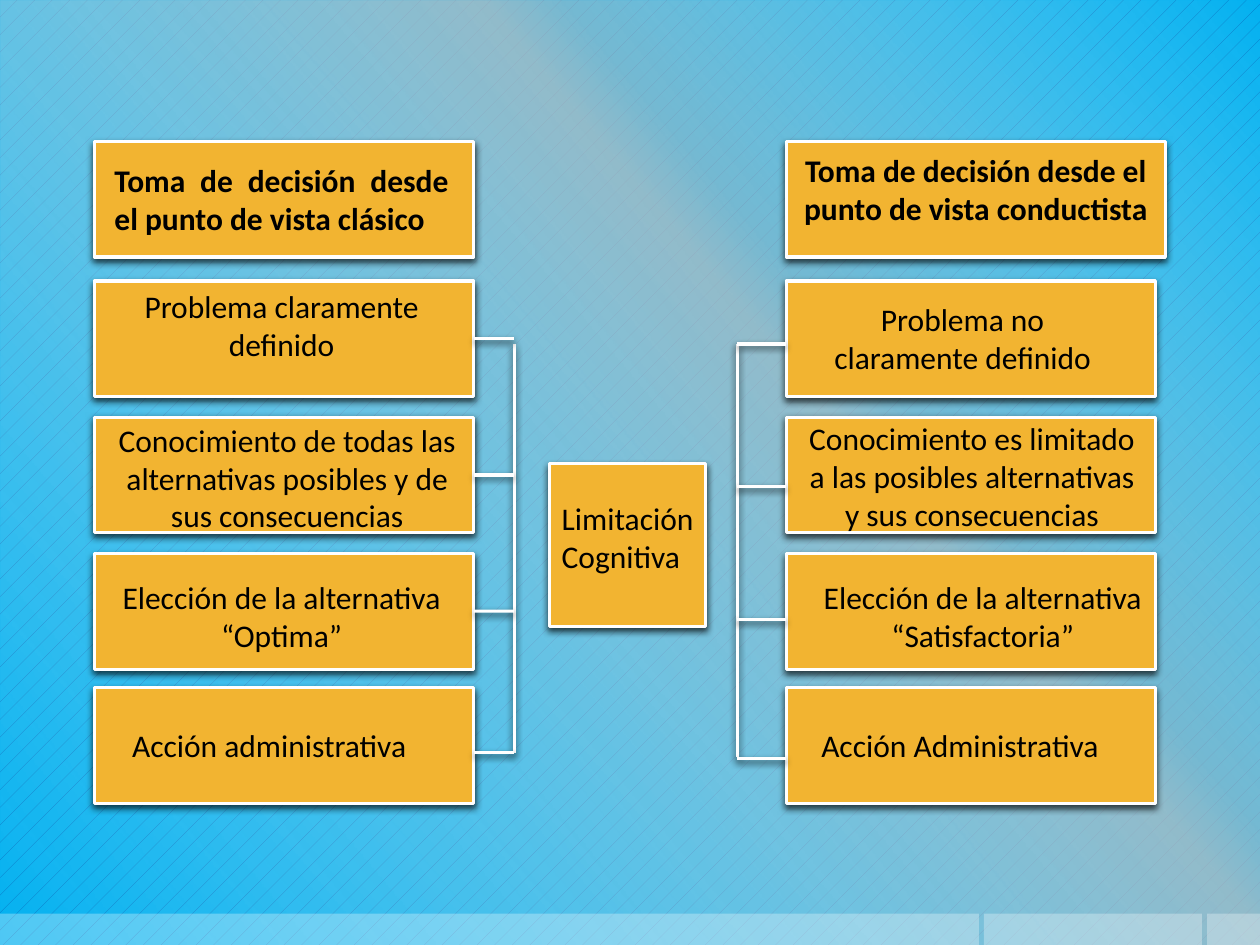
from lxml import etree
from pptx import Presentation
from pptx.dml.color import RGBColor
from pptx.enum import dml, shapes, text
from pptx.oxml import parse_xml
from pptx.oxml.ns import nsdecls, qn
from pptx.util import Inches, Pt

DEEP_BLUE = RGBColor(0x00, 0x70, 0xC0)
SKY_BLUE = RGBColor(0x00, 0xB0, 0xF0)
AMBER = RGBColor(0xF2, 0xB4, 0x31)
WHITE = RGBColor(0xFF, 0xFF, 0xFF)
BLACK = RGBColor(0x00, 0x00, 0x00)

LEFT, CENTER, JUSTIFY = (text.PP_ALIGN.LEFT, text.PP_ALIGN.CENTER,
                         text.PP_ALIGN.JUSTIFY)
CARD_TOPS = (1.12, 2.23, 3.31, 4.39, 5.46)
CARD_HEIGHT = 0.92
LEFT_SIDE, RIGHT_SIDE = 1, 3

# left, top, width, height, alignment, bold, paragraphs
LABELS = (
    (0.81, 1.23, 2.85, 0.71, JUSTIFY, True,
     ["Toma de decisión desde el punto de vista clásico"]),
    (6.24, 1.15, 3.01, 0.71, CENTER, True,
     ["Toma de decisión desde el punto de vista conductista"]),
    (0.81, 2.23, 2.85, 0.71, CENTER, False, ["Problema claramente definido"]),
    (0.81, 4.54, 2.85, 0.71, CENTER, False,
     ["Elección de la alternativa", "“Optima”"]),
    (0.95, 5.71, 2.72, 0.4, LEFT, False, ["Acción administrativa"]),
    (6.42, 2.33, 2.44, 0.71, CENTER, False,
     ["Problema no claramente definido"]),
    (6.42, 4.54, 2.76, 0.71, CENTER, False,
     ["Elección de la alternativa “Satisfactoria”"]),
    (6.42, 5.71, 2.6, 0.4, LEFT, False, ["Acción Administrativa"]),
    (4.36, 3.91, 1.38, 0.71, LEFT, False, ["Limitación Cognitiva"]),
    (0.81, 3.29, 2.94, 1.01, CENTER, False,
     ["Conocimiento de todas las alternativas posibles y de sus "
      "consecuencias"]),
    (6.26, 3.28, 2.91, 1.01, CENTER, False,
     ["Conocimiento es limitado a las posibles alternativas y sus "
      "consecuencias"]),
)


def add_drop_shadow(element):
    """Give a shape or connector element a soft shadow straight below it."""
    properties = element.spPr
    effects = properties.find(qn("a:effectLst"))
    if effects is None:
        effects = etree.SubElement(properties, qn("a:effectLst"))
    effects.append(parse_xml(
        f'<a:outerShdw {nsdecls("a")} blurRad="{Pt(4)}" dist="{Pt(2)}" '
        'dir="5400000" rotWithShape="0"><a:srgbClr val="000000">'
        '<a:alpha val="70000"/></a:srgbClr></a:outerShdw>'))


def add_rectangle(slide, left, top, width, height):
    rectangle = slide.shapes.add_shape(
        shapes.MSO_SHAPE.RECTANGLE, Inches(left), Inches(top),
        Inches(width), Inches(height))
    rectangle.shadow.inherit = False
    return rectangle


def add_background(slide):
    """Patterned blue, a diagonal grey sheen and a pale strip at the foot."""
    fill = slide.background.fill
    fill.patterned()
    fill.pattern = dml.MSO_PATTERN.PERCENT_5
    fill.fore_color.rgb = DEEP_BLUE
    fill.back_color.rgb = SKY_BLUE

    sheen = add_rectangle(slide, 0, 0, 10, 7.5)
    sheen.line.fill.background()
    sheen.fill.gradient()
    gradient = sheen.element.spPr.find(qn("a:gradFill"))
    stops = "".join(
        f'<a:gs pos="{position * 1000}"><a:srgbClr val="{color}">'
        f'<a:alpha val="{alpha * 1000}"/></a:srgbClr></a:gs>'
        for position, color, alpha in (
            (0, "FFFFFF", 0), (34, "BFBFBF", 61),
            (38, "BFBFBF", 76), (100, "FFFFFF", 0)))
    gradient.getparent().replace(gradient, parse_xml(
        f'<a:gradFill {nsdecls("a")} rotWithShape="1"><a:gsLst>{stops}'
        f'</a:gsLst><a:lin ang="{140 * 60000}" scaled="0"/></a:gradFill>'))

    for left, width in ((9.58, 0.42), (7.81, 1.73), (0, 7.77)):
        strip = add_rectangle(slide, left, 7.25, width, 0.25)
        strip.line.fill.background()
        strip.fill.solid()
        strip.fill.fore_color.rgb = WHITE
        color = strip.element.spPr.find(qn("a:solidFill"))[0]
        etree.SubElement(color, qn("a:alpha"), val="30000")


def add_card(slide, left, top, width, height=CARD_HEIGHT):
    card = add_rectangle(slide, left, top, width, height)
    card.fill.solid()
    card.fill.fore_color.rgb = AMBER
    card.line.color.rgb = WHITE
    card.line.width = Pt(1.75)
    add_drop_shadow(card.element)
    return card


def add_line(slide, x1, y1, x2, y2):
    line = slide.shapes.add_connector(
        shapes.MSO_CONNECTOR.STRAIGHT, Inches(x1), Inches(y1),
        Inches(x2), Inches(y2))
    line.line.color.rgb = WHITE
    line.line.width = Pt(1.75)
    add_drop_shadow(line.element)
    return line


def add_bracket(slide, cards, side, spine_x, bottom, edge_x, levels):
    """Draw a spine and a rung to each card; level None is a card's middle."""
    add_line(slide, spine_x, 2.73, spine_x, bottom)
    for card, top, level in zip(cards, CARD_TOPS[1:], levels):
        y = top + CARD_HEIGHT / 2 if level is None else level
        rung = add_line(slide, spine_x, y, edge_x, y)
        if level is None:
            rung.end_connect(card, side)


def add_label(slide, left, top, width, height, alignment, bold, paragraphs):
    frame = slide.shapes.add_textbox(
        Inches(left), Inches(top), Inches(width), Inches(height)).text_frame
    frame.word_wrap = True
    frame.auto_size = text.MSO_AUTO_SIZE.SHAPE_TO_FIT_TEXT
    for index, wording in enumerate(paragraphs):
        paragraph = frame.add_paragraph() if index else frame.paragraphs[0]
        paragraph.alignment = alignment
        run = paragraph.add_run()
        run.text = wording
        run.font.name = "Calibri"
        run.font.size = Pt(18)
        run.font.bold = bold
        run.font.color.rgb = BLACK


def main():
    presentation = Presentation()
    presentation.slide_width = Inches(10)
    presentation.slide_height = Inches(7.5)
    slide = presentation.slides.add_slide(presentation.slide_layouts[6])
    add_background(slide)

    classic = [add_card(slide, 0.75, top, 3.01) for top in CARD_TOPS]
    add_bracket(slide, classic[1:], RIGHT_SIDE, 4.08, 5.98, 3.76,
                (None, None, None, 5.97))
    add_card(slide, 4.36, 3.68, 1.24, 1.29)
    add_card(slide, 6.24, CARD_TOPS[0], 3.01)
    behavioural = [add_card(slide, 6.24, top, 2.93) for top in CARD_TOPS[1:]]
    add_bracket(slide, behavioural, LEFT_SIDE, 5.85, 6.01, 6.24,
                (2.73, 3.86, 4.92, 6.02))

    for label in LABELS:
        add_label(slide, *label)
    presentation.save("out.pptx")


if __name__ == "__main__":
    main()
